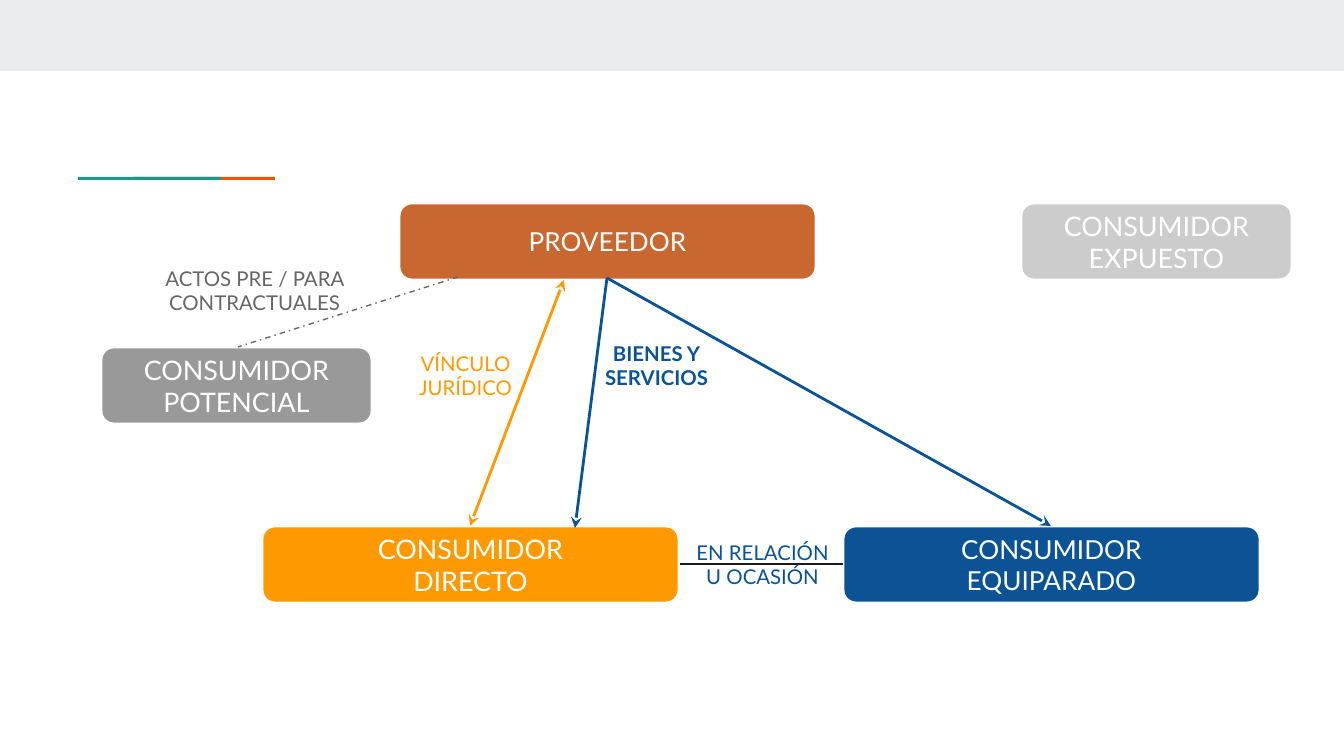
from dataclasses import dataclass

from lxml.etree import SubElement
from pptx import Presentation
from pptx.dml.color import RGBColor
from pptx.enum.dml import MSO_LINE
from pptx.enum.shapes import MSO_CONNECTOR, MSO_SHAPE
from pptx.enum.text import MSO_ANCHOR, MSO_AUTO_SIZE, PP_ALIGN
from pptx.oxml.ns import qn
from pptx.util import Emu, Pt

FONT = "Lato"
WHITE = RGBColor(0xFF, 0xFF, 0xFF)
BAND_GRAY = RGBColor(0xE9, 0xED, 0xEE)
ACCENT_ORANGE = RGBColor(0xEB, 0x56, 0x00)
ACCENT_GREEN = RGBColor(0x1A, 0x99, 0x88)
AMBER = RGBColor(0xFF, 0x99, 0x00)
RUST = RGBColor(0xC9, 0x67, 0x31)
BLUE = RGBColor(0x0B, 0x53, 0x94)
BLACK = RGBColor(0x1A, 0x1A, 0x1A)
DARK_GRAY = RGBColor(0x66, 0x66, 0x66)
MID_GRAY = RGBColor(0x99, 0x99, 0x99)
LIGHT_GRAY = RGBColor(0xCC, 0xCC, 0xCC)

PX_PER_INCH = 134.4
WIDE, NARROW, PARTY_HEIGHT = 417, 271, 77
LABEL_WIDTH, LABEL_HEIGHT = 219, 58
UPPER_ROW, LOWER_ROW = 203, 526


@dataclass
class Bar:
    left: int
    top: int
    width: int
    height: int
    color: RGBColor


@dataclass
class Party:
    lines: list[str]
    left: int
    top: int
    width: int
    color: RGBColor
    size: float = 14.4


@dataclass
class Link:
    start: tuple[int, int]
    end: tuple[int, int]
    color: RGBColor
    width: float = 1.5
    arrows: tuple[str, ...] = ()
    dash: MSO_LINE | None = None


@dataclass
class Label:
    lines: list[str]
    left: int
    top: int
    color: RGBColor
    bold: bool = False


BARS = [
    Bar(0, 0, 1344, 71, BAND_GRAY),
    Bar(133, 177, 142, 3, ACCENT_ORANGE),
    Bar(78, 177, 143, 3, ACCENT_GREEN),
]
PARTIES = [
    Party(["CONSUMIDOR", "DIRECTO"], 262, LOWER_ROW, WIDE, AMBER),
    Party(["PROVEEDOR"], 399, UPPER_ROW, WIDE, RUST, 14),
    Party(["CONSUMIDOR", "EQUIPARADO"], 843, LOWER_ROW, WIDE, BLUE, 14),
    Party(["CONSUMIDOR", "POTENCIAL"], 101, 347, NARROW, MID_GRAY),
    Party(["CONSUMIDOR", "EXPUESTO"], 1021, UPPER_ROW, NARROW, LIGHT_GRAY),
]
LINKS = [
    Link((564, 280), (470, 526), AMBER, arrows=("headEnd", "tailEnd")),
    Link((607, 278), (1051, 526), BLUE, arrows=("tailEnd",)),
    Link((607, 278), (575, 528), BLUE, arrows=("tailEnd",)),
    Link((680, 564), (843, 564), BLACK, 0.75),
    Link((458, 277), (238, 347), DARK_GRAY, 0.75, dash=MSO_LINE.DASH_DOT),
]
LABELS = [
    Label(["VÍNCULO", "JURÍDICO"], 356, 347, AMBER),
    Label(["BIENES Y", "SERVICIOS"], 547, 337, BLUE, bold=True),
    Label(["EN RELACIÓN", "U OCASIÓN"], 653, 536, BLUE),
    Label(["ACTOS PRE / PARA CONTRACTUALES"], 145, 262, DARK_GRAY),
]


def px(length: int) -> Emu:
    return Emu(round(length * 914400 / PX_PER_INCH))


def write_lines(frame, lines: list[str], size: float, color: RGBColor, bold: bool = False) -> None:
    frame.word_wrap = True
    frame.margin_left = frame.margin_right = px(8)
    frame.margin_top = frame.margin_bottom = px(4)
    frame.text = "\n".join(lines)
    for paragraph in frame.paragraphs:
        paragraph.alignment = PP_ALIGN.CENTER
        paragraph.font.name = FONT
        paragraph.font.size = Pt(size)
        paragraph.font.bold = bold
        paragraph.font.color.rgb = color


def draw_bar(slide, bar: Bar) -> None:
    strip = slide.shapes.add_shape(
        MSO_SHAPE.RECTANGLE, px(bar.left), px(bar.top), px(bar.width), px(bar.height))
    strip.shadow.inherit = False
    strip.fill.solid()
    strip.fill.fore_color.rgb = bar.color
    strip.line.fill.background()


def draw_party(slide, party: Party) -> None:
    box = slide.shapes.add_shape(
        MSO_SHAPE.ROUNDED_RECTANGLE,
        px(party.left), px(party.top), px(party.width), px(PARTY_HEIGHT))
    box.shadow.inherit = False
    box.fill.solid()
    box.fill.fore_color.rgb = party.color
    box.line.color.rgb = WHITE
    box.line.width = Pt(1.52)
    box.text_frame.vertical_anchor = MSO_ANCHOR.MIDDLE
    write_lines(box.text_frame, party.lines, party.size, WHITE)


def draw_link(slide, link: Link) -> None:
    connector = slide.shapes.add_connector(
        MSO_CONNECTOR.STRAIGHT, *map(px, link.start), *map(px, link.end))
    connector.line.color.rgb = link.color
    connector.line.width = Pt(link.width)
    if link.dash is not None:
        connector.line.dash_style = link.dash
    outline = connector.line._get_or_add_ln()
    for arrow in link.arrows:
        SubElement(outline, qn(f"a:{arrow}"), type="stealth")
    SubElement(connector._element.spPr, qn("a:effectLst"))


def draw_label(slide, label: Label) -> None:
    caption = slide.shapes.add_textbox(
        px(label.left), px(label.top), px(LABEL_WIDTH), px(LABEL_HEIGHT))
    write_lines(caption.text_frame, label.lines, 10.9, label.color, label.bold)
    caption.text_frame.auto_size = MSO_AUTO_SIZE.SHAPE_TO_FIT_TEXT


def main() -> None:
    presentation = Presentation()
    presentation.slide_width, presentation.slide_height = px(1344), px(756)
    slide = presentation.slides.add_slide(presentation.slide_layouts[6])

    # Top band and two-colour accent
    for bar in BARS:
        draw_bar(slide, bar)
    # Provider and kinds of consumer
    for party in PARTIES:
        draw_party(slide, party)
    # Relations between them, with their captions
    for link in LINKS:
        draw_link(slide, link)
    for label in LABELS:
        draw_label(slide, label)

    presentation.save("out.pptx")


if __name__ == "__main__":
    main()
